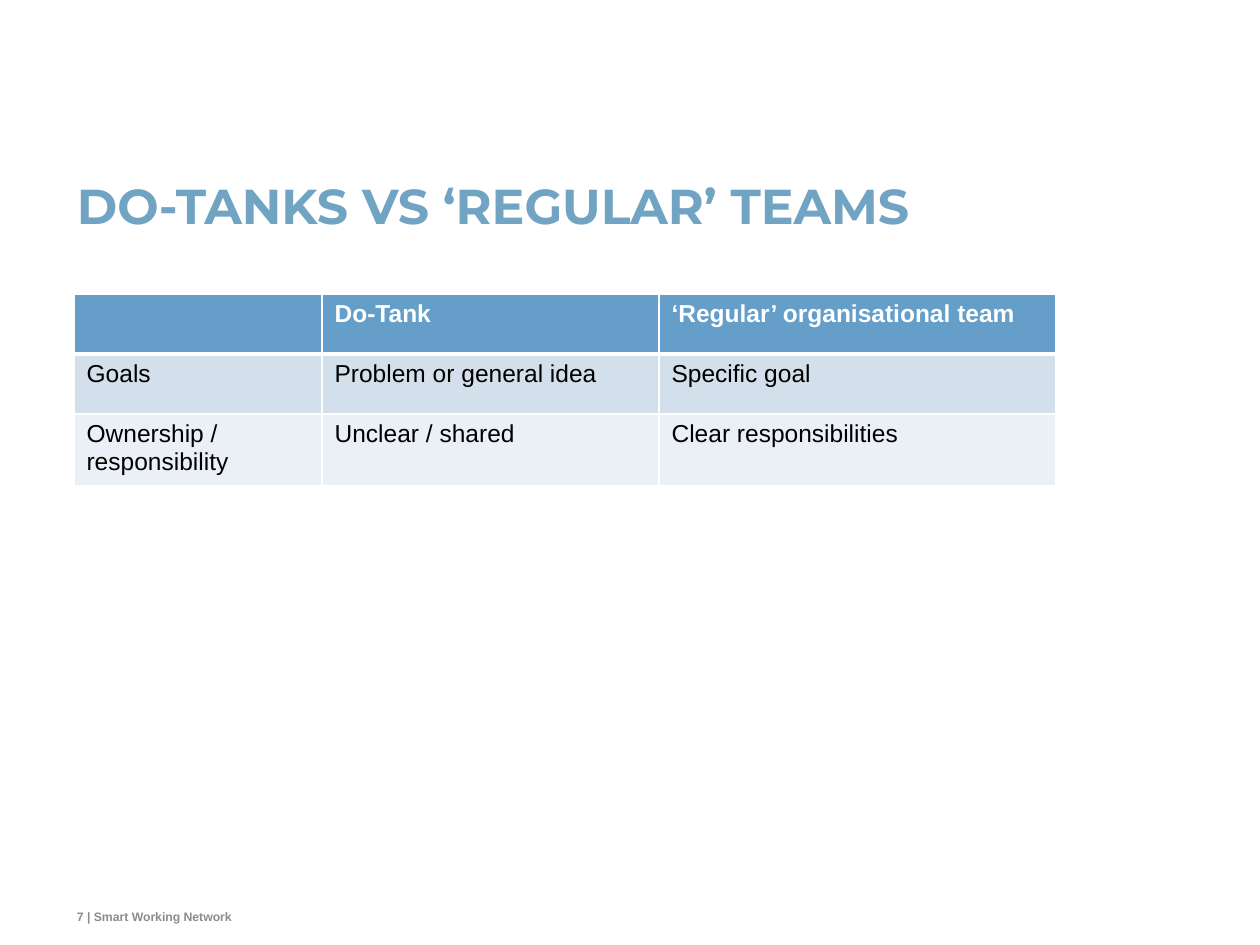
from lxml.etree import SubElement
from pptx import Presentation
from pptx.dml.color import RGBColor
from pptx.enum.text import MSO_ANCHOR, PP_ALIGN
from pptx.oxml.ns import qn
from pptx.util import Pt

PX = 914400 / 126
BLUE = RGBColor(0x64, 0x9E, 0xC9)
SKY = RGBColor(0x71, 0xA4, 0xC3)
PALE = RGBColor(0xD3, 0xDF, 0xEB)
MIST = RGBColor(0xEA, 0xF0, 0xF5)
GREY = RGBColor(0x8C, 0x8C, 0x8C)
WHITE = RGBColor(0xFF, 0xFF, 0xFF)
BLACK = RGBColor(0, 0, 0)


def px(*nums):
    """Turn pixel lengths into EMU."""
    return [round(n * PX) for n in nums]


def write(frame, text, face, size, color, bold):
    para = frame.paragraphs[0]
    para.alignment = PP_ALIGN.LEFT
    run = para.add_run()
    run.text = text
    run.font.name = face
    run.font.size = Pt(size)
    run.font.color.rgb = color
    run.font.bold = bold
    return para


prs = Presentation()
prs.slide_width, prs.slide_height = px(1260, 945)
slide = prs.slides.add_slide(prs.slide_layouts[5])

# Title and footer
title = slide.shapes.title
title.left, title.top, title.width, title.height = px(77, 185, 1110, 100)
foot = slide.shapes.add_textbox(*px(77, 900, 595, 24))
for box, anchor in ((title, MSO_ANCHOR.TOP), (foot, MSO_ANCHOR.BOTTOM)):
    frame = box.text_frame
    frame.margin_left = frame.margin_right = 0
    frame.margin_top = frame.margin_bottom = 0
    frame.word_wrap = True
    frame.vertical_anchor = anchor
head = write(title.text_frame, "DO-TANKS VS ‘REGULAR’ TEAMS",
             "Montserrat", 28, SKY, True)
head.line_spacing = Pt(28)
write(foot.text_frame, "7 | Smart Working Network", "Arial", 7, GREY, True)

# Comparison table
rows = [
    ("", "Do-Tank", "‘Regular’ organisational team"),
    ("Goals", "Problem or general idea", "Specific goal"),
    ("Ownership / responsibility", "Unclear / shared",
     "Clear responsibilities"),
]
fills = (BLUE, PALE, MIST)
widths = px(248, 337, 397)
grid = slide.shapes.add_table(3, 3, *px(74, 294, 982, 180)).table
for col, width in zip(grid.columns, widths):
    col.width = width
for r, (row, fill) in enumerate(zip(rows, fills)):
    grid.rows[r].height = px(60)[0]
    for c, text in enumerate(row):
        cell = grid.cell(r, c)
        props = cell._tc.get_or_add_tcPr()
        for side in "LRTB":
            thick = (r, side) in ((0, "B"), (1, "T"))
            line = SubElement(props, qn(f"a:ln{side}"),
                              w=str(Pt(3 if thick else 1)))
            solid = SubElement(line, qn("a:solidFill"))
            SubElement(solid, qn("a:srgbClr"), val=str(WHITE))
        cell.fill.solid()
        cell.fill.fore_color.rgb = fill
        if text:
            write(cell.text_frame, text, "Arial", 14,
                  BLACK if r else WHITE, r == 0)

prs.save("out.pptx")
